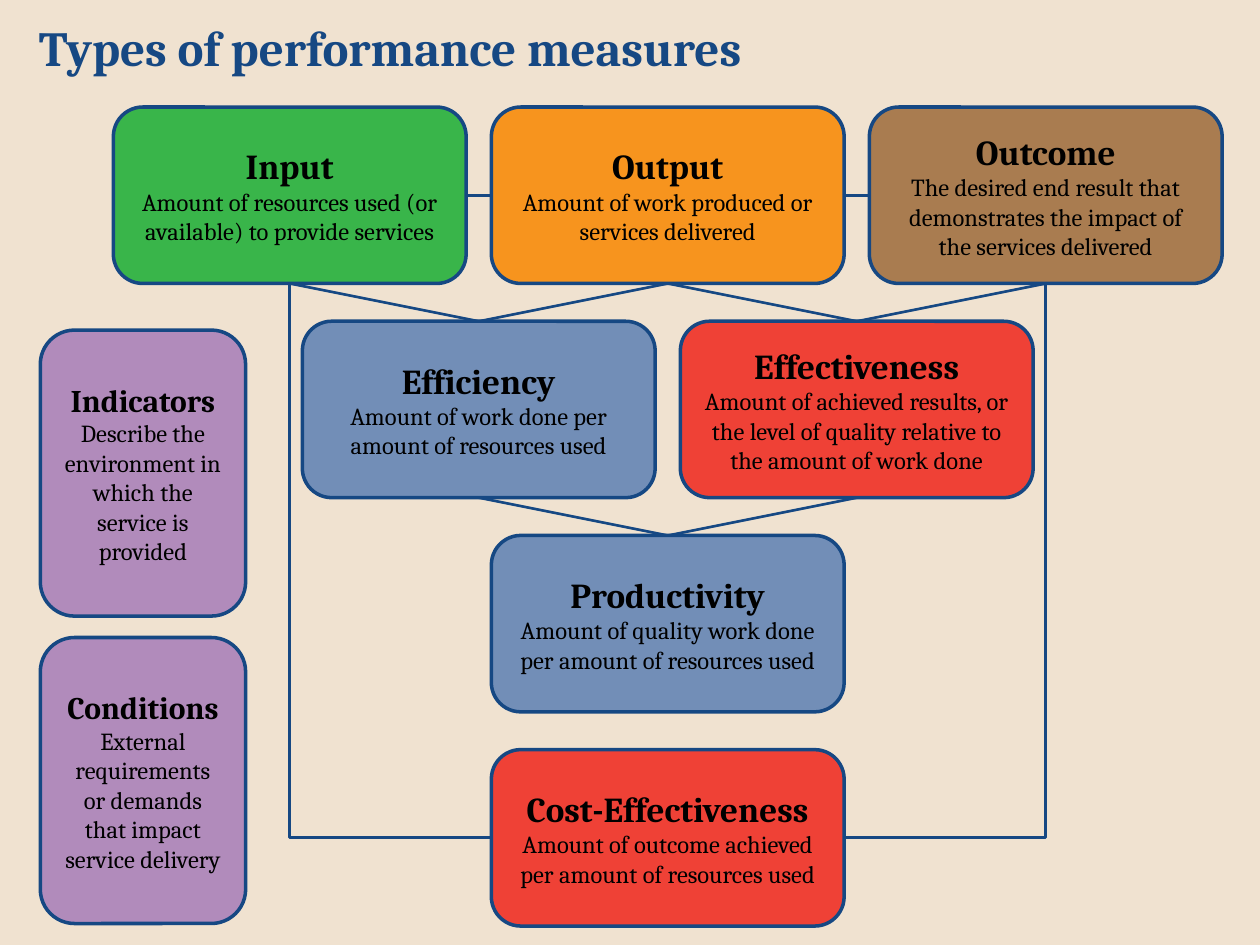
from dataclasses import dataclass

import pptx
import pptx.dml.color
import pptx.enum.shapes
import pptx.enum.text
import pptx.oxml.ns
import pptx.util
from lxml import etree

SLIDE_W, SLIDE_H = 10, 7.5
FONT = "Cambria"
COLORS = {
    "background": "F0E2D0", "navy": "164883", "black": "000000",
    "green": "39B54A", "orange": "F7941E", "brown": "A97C50",
    "blue": "728EB7", "red": "EF4136", "purple": "B18BBB",
}
TOP, LEFT, BOTTOM, RIGHT = range(4)


@dataclass(frozen=True)
class Grid:
    left: float
    top: float
    col_step: float
    row_step: float
    box_w: float
    box_h: float
    heading_size: int


@dataclass(frozen=True)
class Measure:
    name: str
    description: str
    color: str
    col: int
    row: int


@dataclass(frozen=True)
class Link:
    start: str
    start_side: int
    end: str
    end_side: int
    bent: bool = False


# Neighbouring boxes in a row are two columns apart
MEASURE_GRID = Grid(0.9, 0.85, 1.5, 1.7, 2.8, 1.4, 20)
CONTEXT_GRID = Grid(0.32, 2.62, 0, 2.44, 1.63, 2.27, 18)

MEASURES = [
    Measure("Input", "Amount of resources used (or available) to provide services", "green", 0, 0),
    Measure("Output", "Amount of work produced or services delivered", "orange", 2, 0),
    Measure("Outcome", "The desired end result that demonstrates the impact of the services delivered",
            "brown", 4, 0),
    Measure("Efficiency", "Amount of work done per amount of resources used", "blue", 1, 1),
    Measure("Productivity", "Amount of quality work done per amount of resources used", "blue", 2, 2),
    Measure("Effectiveness", "Amount of achieved results, or the level of quality relative to "
            "the amount of work done", "red", 3, 1),
    Measure("Cost-Effectiveness", "Amount of outcome achieved per amount of resources used", "red", 2, 3),
]
CONTEXT = [
    Measure("Indicators", "Describe the environment in which the service is provided", "purple", 0, 0),
    Measure("Conditions", "External requirements or demands that impact service delivery", "purple", 0, 1),
]
LINKS = [
    Link("Input", BOTTOM, "Efficiency", TOP),
    Link("Efficiency", TOP, "Output", BOTTOM),
    Link("Output", BOTTOM, "Effectiveness", TOP),
    Link("Effectiveness", TOP, "Outcome", BOTTOM),
    Link("Efficiency", BOTTOM, "Productivity", TOP),
    Link("Productivity", TOP, "Effectiveness", BOTTOM),
    Link("Cost-Effectiveness", RIGHT, "Outcome", BOTTOM, bent=True),
    Link("Cost-Effectiveness", LEFT, "Input", BOTTOM, bent=True),
    Link("Input", RIGHT, "Output", LEFT),
    Link("Output", RIGHT, "Outcome", LEFT),
]


def rgb(name: str) -> pptx.dml.color.RGBColor:
    return pptx.dml.color.RGBColor.from_string(COLORS[name])


def write(p, text: str, *, size: int, color: str = "black", bold: bool = False,
          align=pptx.enum.text.PP_ALIGN.CENTER) -> None:
    p.alignment = align
    r = p.add_run()
    r.text = text
    r.font.name = FONT
    r.font.size = pptx.util.Pt(size)
    r.font.bold = bold
    r.font.color.rgb = rgb(color)


def style_line(line, width: float) -> None:
    line.color.rgb = rgb("navy")
    line.width = pptx.util.Pt(width)


def add_title(slide, text: str) -> None:
    sp = slide.shapes.add_textbox(*map(pptx.util.Inches, (0.2, 0, 0.9 * SLIDE_W, 0.1 * SLIDE_H)))
    tf = sp.text_frame
    tf.word_wrap = True
    tf.margin_left = pptx.util.Inches(0.11)
    tf.vertical_anchor = pptx.enum.text.MSO_ANCHOR.MIDDLE
    write(tf.paragraphs[0], text, size=28, color="navy", bold=True,
          align=pptx.enum.text.PP_ALIGN.LEFT)


def add_measure(slide, grid: Grid, measure: Measure):
    left = grid.left + measure.col * grid.col_step
    top = grid.top + measure.row * grid.row_step
    sp = slide.shapes.add_shape(pptx.enum.shapes.MSO_SHAPE.ROUNDED_RECTANGLE,
                                *map(pptx.util.Inches, (left, top, grid.box_w, grid.box_h)))
    sp.shadow.inherit = False
    sp.fill.solid()
    sp.fill.fore_color.rgb = rgb(measure.color)
    style_line(sp.line, 2)
    tf = sp.text_frame
    tf.word_wrap = True
    tf.vertical_anchor = pptx.enum.text.MSO_ANCHOR.MIDDLE
    write(tf.paragraphs[0], measure.name, size=grid.heading_size, bold=True)
    write(tf.add_paragraph(), measure.description, size=14)
    return sp


def add_link(slide, boxes: dict, link: Link) -> None:
    """Join two boxes; a bent link leaves sideways and turns once."""
    kinds = pptx.enum.shapes.MSO_CONNECTOR
    cxn = slide.shapes.add_connector(kinds.ELBOW if link.bent else kinds.STRAIGHT, 0, 0, 0, 0)
    cxn.begin_connect(boxes[link.start], link.start_side)
    cxn.end_connect(boxes[link.end], link.end_side)
    style_line(cxn.line, 1.5)
    qn = pptx.oxml.ns.qn
    sp_pr = cxn._element.spPr
    if link.bent:
        sp_pr.find(qn("a:prstGeom")).set("prst", "bentConnector2")
    etree.SubElement(sp_pr, qn("a:effectLst"))


def main() -> None:
    prs = pptx.Presentation()
    prs.slide_width = pptx.util.Inches(SLIDE_W)
    prs.slide_height = pptx.util.Inches(SLIDE_H)
    slide = prs.slides.add_slide(prs.slide_layouts[6])
    slide.background.fill.solid()
    slide.background.fill.fore_color.rgb = rgb("background")

    boxes = {m.name: add_measure(slide, MEASURE_GRID, m) for m in MEASURES}
    add_title(slide, "Types of performance measures")
    for link in LINKS:
        add_link(slide, boxes, link)
    for measure in CONTEXT:
        add_measure(slide, CONTEXT_GRID, measure)
    prs.save("out.pptx")


if __name__ == "__main__":
    main()
